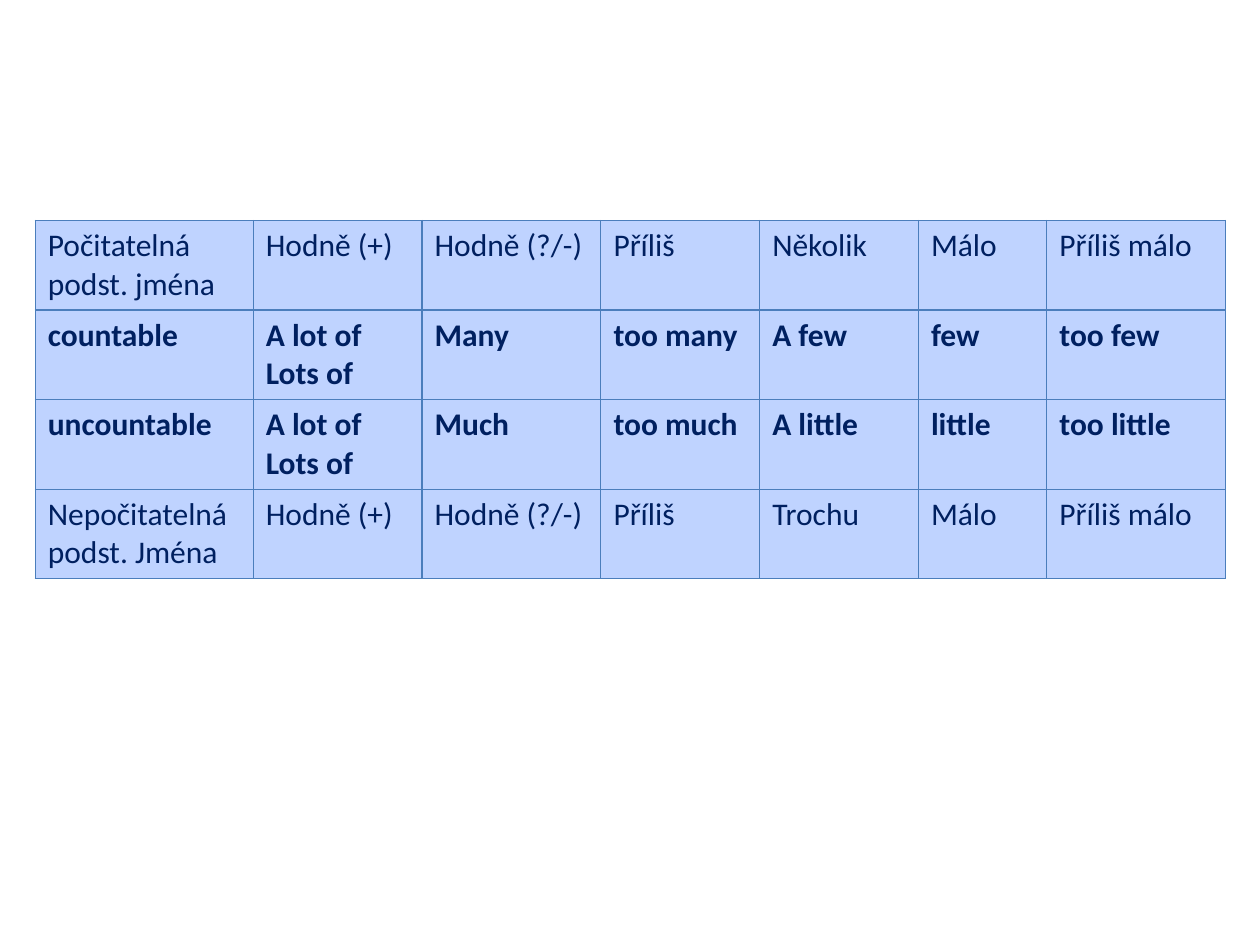
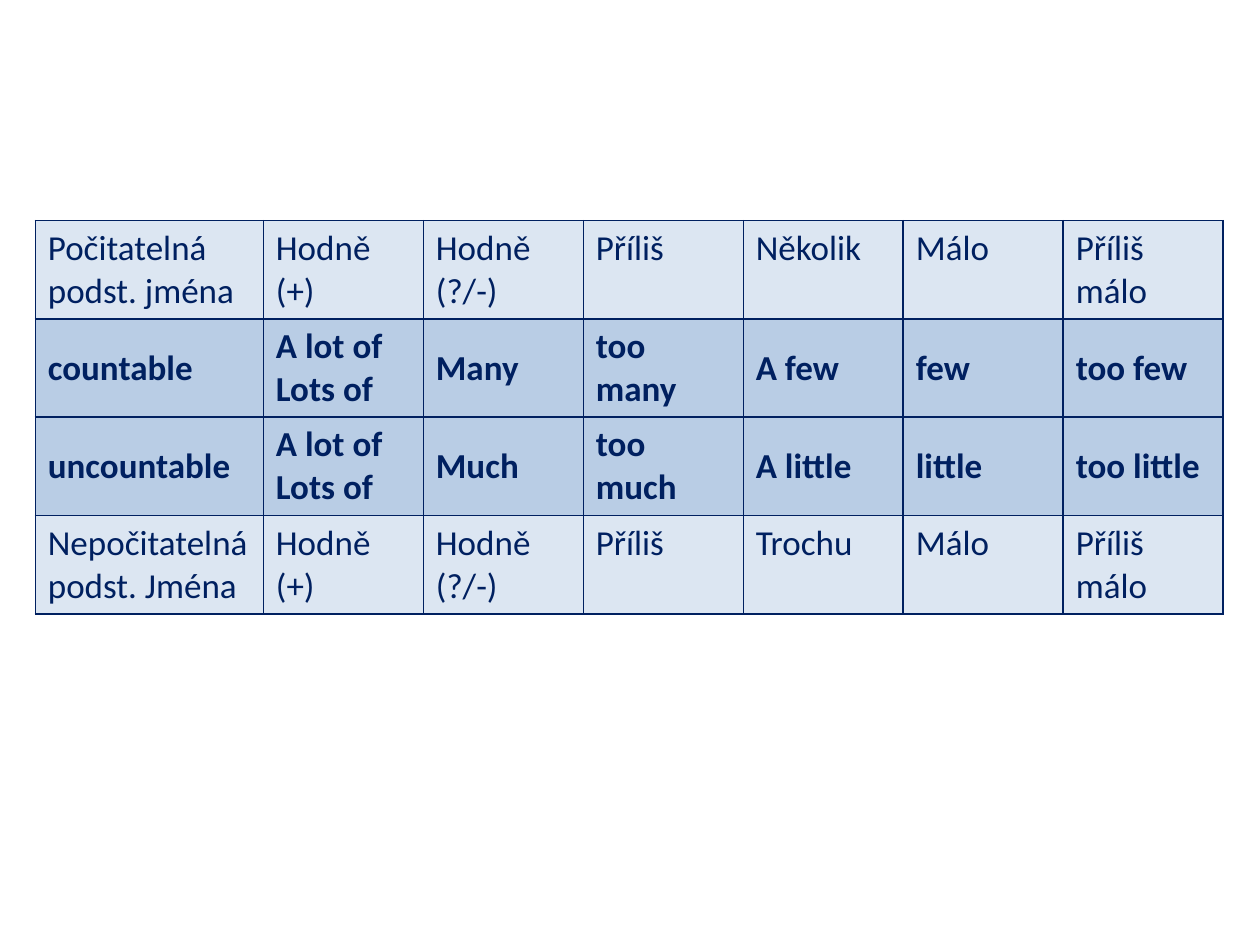
import pptx
import pptx.util
import pptx.dml.color
import pptx.enum.text
import lxml.etree
from dataclasses import dataclass

WORDS = [
    ["Počitatelná podst. jména", "Hodně (+)", "Hodně (?/-)", "Příliš",
     "Několik", "Málo", "Příliš málo"],
    ["countable", "A lot of\nLots of", "Many", "too many",
     "A few", "few", "too few"],
    ["uncountable", "A lot of\nLots of", "Much", "too much",
     "A little", "little", "too little"],
    ["Nepočitatelná\npodst. Jména", "Hodně (+)", "Hodně (?/-)", "Příliš",
     "Trochu", "Málo", "Příliš málo"],
]
ENGLISH = (1, 2)


@dataclass
class Theme:
    font: str = "Calibri"
    ink: str = "002060"
    sky: str = "BFD3FF"
    pale: str = "DCE6F2"
    mid: str = "B9CDE5"
    edge: str = "4B7EBC"
    small: int = 18
    large: int = 20


THEME = Theme()
MIDDLE = pptx.enum.text.MSO_ANCHOR.MIDDLE
TOP = pptx.enum.text.MSO_ANCHOR.TOP
LEFT, HEAD = 0.28, 1.75

GRIDS = [
    dict(cols=[1.73, 1.34, 1.42, 1.26, 1.26, 1.02, 1.42], high=0.71,
         size=THEME.small, plain=THEME.sky, strong=THEME.sky,
         edge=THEME.edge, line=0.75, anchor=TOP),
    dict(cols=[1.81] + [1.27] * 6, high=0.78,
         size=THEME.large, plain=THEME.pale, strong=THEME.mid,
         edge=THEME.ink, line=1, anchor=MIDDLE),
]


def rgb(code):
    return pptx.dml.color.RGBColor.from_string(code)


def add_edges(cell, code, width):
    props = cell._tc.get_or_add_tcPr()
    qn = pptx.oxml.ns.qn
    for spot, side in enumerate(("lnL", "lnR", "lnT", "lnB")):
        line = lxml.etree.Element(qn("a:" + side), w=str(pptx.util.Pt(width)))
        fill = lxml.etree.SubElement(line, qn("a:solidFill"))
        lxml.etree.SubElement(fill, qn("a:srgbClr"), val=code)
        props.insert(spot, line)


def fill_cell(cell, text, grid, strong):
    cell.text_frame.text = text
    cell.vertical_anchor = grid["anchor"] if strong else TOP
    cell.fill.solid()
    cell.fill.fore_color.rgb = rgb(grid["strong" if strong else "plain"])
    add_edges(cell, grid["edge"], grid["line"])
    for para in cell.text_frame.paragraphs:
        for run in para.runs:
            run.font.name = THEME.font
            run.font.size = pptx.util.Pt(grid["size"])
            run.font.bold = strong
            run.font.color.rgb = rgb(THEME.ink)


def add_grid(slide, grid):
    inch = pptx.util.Inches
    cols, high = grid["cols"], grid["high"]
    table = slide.shapes.add_table(
        len(WORDS), len(cols), inch(LEFT), inch(HEAD),
        inch(sum(cols)), inch(high * len(WORDS))).table
    table.first_row = False
    table.horz_banding = False
    for col, width in zip(table.columns, cols):
        col.width = inch(width)
    for row, line in enumerate(WORDS):
        table.rows[row].height = inch(high)
        for col, text in enumerate(line):
            fill_cell(table.cell(row, col), text, grid, row in ENGLISH)


def main():
    deck = pptx.Presentation()
    deck.slide_width = pptx.util.Inches(10)
    deck.slide_height = pptx.util.Inches(7.5)
    for grid in GRIDS:
        add_grid(deck.slides.add_slide(deck.slide_layouts[6]), grid)
    deck.save("out.pptx")


if __name__ == "__main__":
    main()
